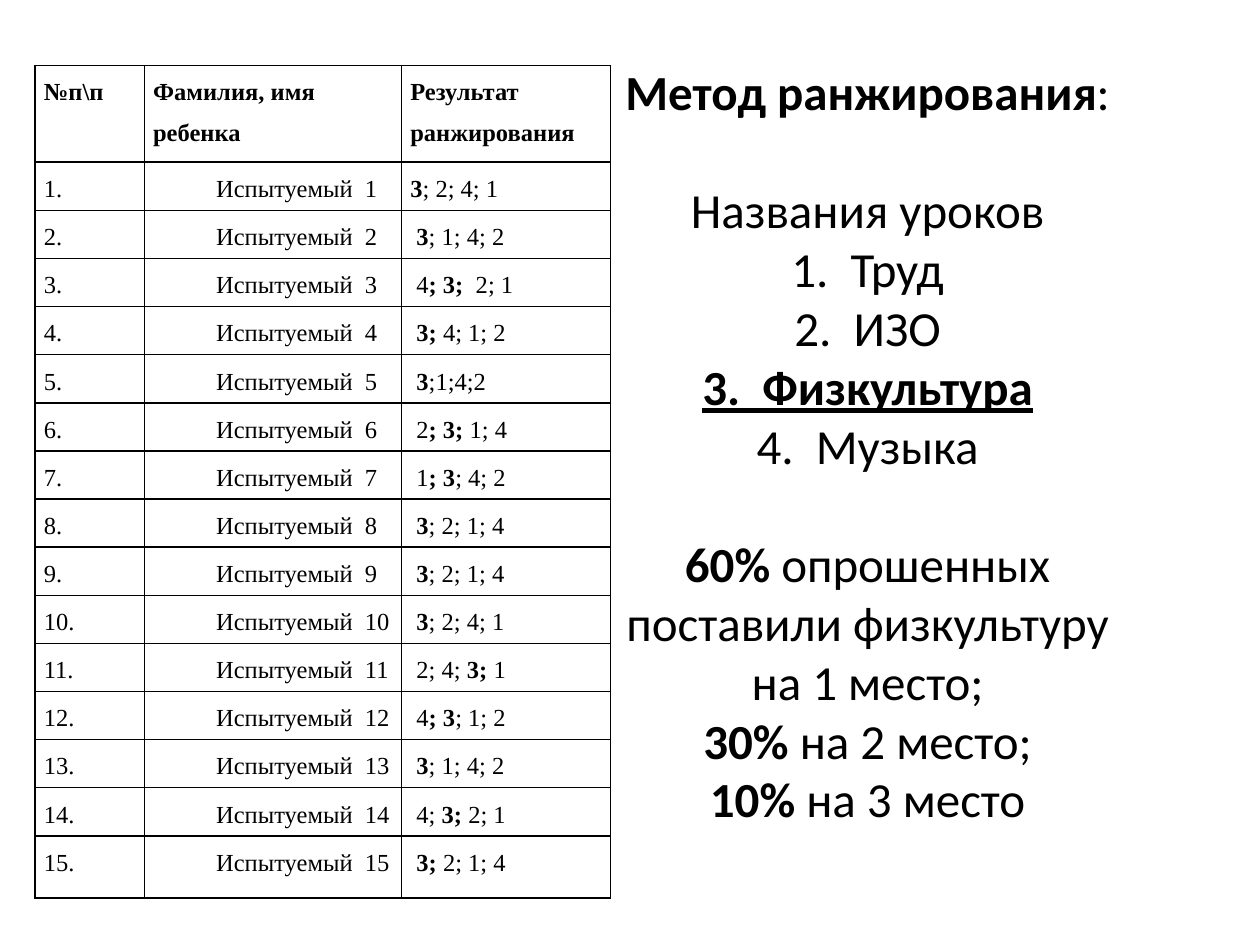
from lxml import etree
from pptx import Presentation
from pptx.dml.color import RGBColor
from pptx.enum import text as t
from pptx.oxml import ns
from pptx.util import Pt

BLACK = RGBColor(0, 0, 0)
WHITE = RGBColor(255, 255, 255)

HEADERS = ["№п\\п", "Фамилия, имя ребенка", "Результат ранжирования"]
# Asterisks enclose bold text.
RANKINGS = [
    "*3*; 2; 4; 1", " *3*; 1; 4; 2", " 4*; 3; * 2; 1", " *3; *4; 1; 2",
    " *3*;1;4;2", " 2*; 3; *1; 4", " 1*; 3*; 4; 2", " *3*; 2; 1; 4",
    " *3*; 2; 1; 4", " *3*; 2; 4; 1", " 2; 4; *3; *1", " 4*; 3*; 1; 2",
    " *3*; 1; 4; 2", " 4; *3; *2; 1", " *3; *2; 1; 4",
]
CONCLUSIONS = [
    "*Метод ранжирования*:", "Названия уроков", "1.  Труд", "2.  ИЗО",
    "*3.  Физкультура*", "4.  Музыка",
    "*60% *опрошенных поставили физкультуру на 1 место;",
    "*30% *на 2 место;", "*10% *на 3 место",
]
SECTION_STARTS = (1, 6)
UNDERLINED = 4

COLUMN_WIDTHS = [62.5, 147, 119.5]
HEADER_HEIGHT, ROW_HEIGHT, LAST_HEIGHT = 55.2, 27.5, 35.5


def write_text(paragraph, content, *, font, size, align=t.PP_ALIGN.LEFT,
               spacing=1.0, before=0, indent=0, underline=False):
    """Fill a paragraph, with the parts between asterisks in bold."""
    paragraph.alignment = align
    paragraph.line_spacing = spacing
    paragraph.space_before = Pt(before)
    if indent:
        paragraph._p.get_or_add_pPr().set("marL", str(Pt(indent)))
    for number, part in enumerate(content.split("*")):
        if part:
            run = paragraph.add_run()
            run.text = part
            run.font.name = font
            run.font.size = Pt(size)
            run.font.bold = number % 2 == 1
            run.font.underline = underline
            run.font.color.rgb = BLACK


def set_borders(cell):
    properties = cell._tc.get_or_add_tcPr()
    for position, side in enumerate(("lnL", "lnR", "lnT", "lnB")):
        line = etree.Element(ns.qn(f"a:{side}"), w=str(Pt(1)))
        fill = etree.SubElement(line, ns.qn("a:solidFill"))
        etree.SubElement(fill, ns.qn("a:srgbClr"), val=str(BLACK))
        properties.insert(position, line)


def add_ranking_table(slide, left, top):
    rows = [[f"*{header}*" for header in HEADERS]]
    rows += [[f"{number}.", f"Испытуемый  {number}", ranking]
             for number, ranking in enumerate(RANKINGS, 1)]
    heights = [HEADER_HEIGHT] + [ROW_HEIGHT] * (len(RANKINGS) - 1) + [LAST_HEIGHT]
    table = slide.shapes.add_table(
        len(rows), len(HEADERS), Pt(left), Pt(top),
        Pt(sum(COLUMN_WIDTHS)), Pt(sum(heights))).table
    for column, width in zip(table.columns, COLUMN_WIDTHS):
        column.width = Pt(width)
    for row, height in zip(table.rows, heights):
        row.height = Pt(height)
    for row_number, row in enumerate(rows):
        for column_number, content in enumerate(row):
            cell = table.cell(row_number, column_number)
            cell.margin_left = cell.margin_right = Pt(5)
            cell.margin_top = cell.margin_bottom = 0
            cell.fill.solid()
            cell.fill.fore_color.rgb = WHITE
            set_borders(cell)
            is_name = row_number > 0 and column_number == 1
            write_text(cell.text_frame.paragraphs[0], content,
                       font="Times New Roman", size=14, spacing=1.5,
                       indent=36 if is_name else 0)


def add_conclusions(slide, left, top, width, height):
    box = slide.shapes.add_textbox(Pt(left), Pt(top), Pt(width), Pt(height))
    frame = box.text_frame
    frame.word_wrap = True
    for number, content in enumerate(CONCLUSIONS):
        paragraph = frame.add_paragraph() if number else frame.paragraphs[0]
        write_text(paragraph, content, font="Calibri", size=28,
                   align=t.PP_ALIGN.CENTER,
                   before=34 if number in SECTION_STARTS else 0,
                   underline=number == UNDERLINED)


def main():
    presentation = Presentation()
    presentation.slide_width, presentation.slide_height = Pt(720), Pt(540)
    slide = presentation.slides.add_slide(presentation.slide_layouts[6])
    add_ranking_table(slide, 20, 37.5)
    add_conclusions(slide, 348.5, 31.7, 294.5, 448.5)
    presentation.save("out.pptx")


if __name__ == "__main__":
    main()
